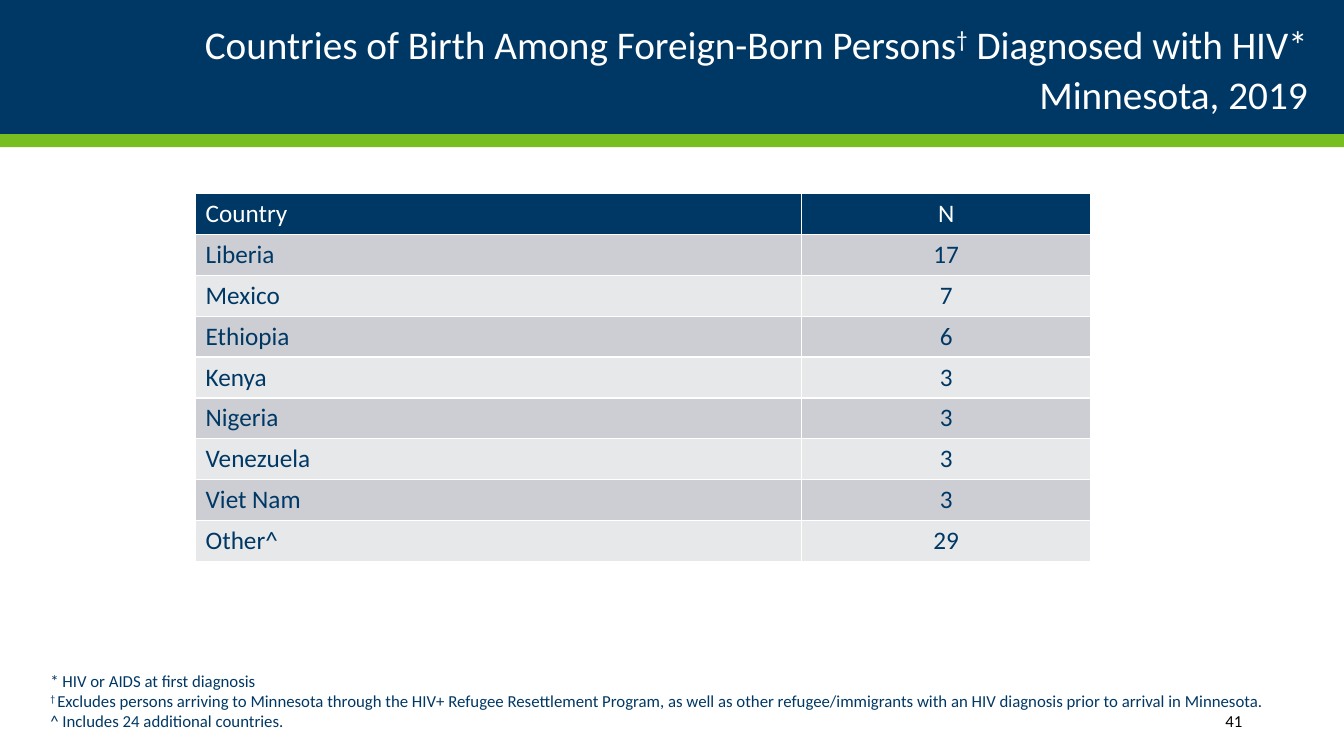
from pptx import Presentation, util as u
from pptx.dml.color import RGBColor
from pptx.enum import shapes, text

NAVY = RGBColor(0x00, 0x38, 0x65)
GREEN = RGBColor(0x78, 0xBE, 0x21)
WHITE = RGBColor(0xFF, 0xFF, 0xFF)
BLACK = RGBColor(0x00, 0x00, 0x00)
BANDS = [RGBColor(0xE7, 0xE8, 0xEA), RGBColor(0xCC, 0xCE, 0xD3)]
FONT = "Calibri"
DAGGER = "†"


def format_text(p, size, color, align):
    p.alignment = align
    for r in p.runs:
        r.font.name, r.font.size, r.font.bold = FONT, u.Pt(size), False
        r.font.color.rgb = color
        if r.text.strip() == DAGGER:
            r._r.get_or_add_rPr().set("baseline", "30000")


def add_text(s, left, top, width, height):
    tf = s.shapes.add_textbox(*map(u.Inches, (left, top, width, height))).text_frame
    tf.word_wrap = True
    return tf


prs = Presentation()
prs.slide_width, prs.slide_height = u.Inches(13.33), u.Inches(7.5)
s = prs.slides.add_slide(prs.slide_layouts[5])

# Header bands
for top, height, color in [(0, 1.33, NAVY), (1.33, 0.13, GREEN)]:
    sp = s.shapes.add_shape(shapes.MSO_SHAPE.RECTANGLE, 0, u.Inches(top),
                            prs.slide_width, u.Inches(height))
    sp.shadow.inherit = False
    sp.fill.solid()
    sp.fill.fore_color.rgb = color
    sp.line.fill.background()

# Title, brought in front of the bands
title = s.shapes.title
s.shapes._spTree.append(title._element)
title.left, title.top = u.Inches(0.92), u.Inches(0.17)
title.width, title.height = u.Inches(12.15), u.Inches(1)
tf = title.text_frame
tf.auto_size = text.MSO_AUTO_SIZE.NONE
tf.vertical_anchor = text.MSO_ANCHOR.MIDDLE
p = tf.paragraphs[0]
p.line_spacing = 1.05
for part in ["Countries of Birth Among Foreign-Born Persons", DAGGER,
             " Diagnosed with HIV*"]:
    p.add_run().text = part
p.add_line_break()
p.add_run().text = "Minnesota, 2019"
format_text(p, 28, WHITE, text.PP_ALIGN.RIGHT)

# Table of countries
rows = [("Country", "N"), ("Liberia", 17), ("Mexico", 7), ("Ethiopia", 6),
        ("Kenya", 3), ("Nigeria", 3), ("Venezuela", 3), ("Viet Nam", 3),
        ("Other^", 29)]
col_widths = [6.01, 2.87]
aligns = [text.PP_ALIGN.LEFT, text.PP_ALIGN.CENTER]
table = s.shapes.add_table(len(rows), len(col_widths), u.Inches(1.94), u.Inches(1.92),
                           u.Inches(sum(col_widths)), u.Inches(0.4 * len(rows))).table
for col, width in zip(table.columns, col_widths):
    col.width = u.Inches(width)
for i, row in enumerate(rows):
    for j, value in enumerate(row):
        cell = table.cell(i, j)
        cell.fill.solid()
        cell.fill.fore_color.rgb = BANDS[i % 2] if i else NAVY
        p = cell.text_frame.paragraphs[0]
        p.text = str(value)
        format_text(p, 18, NAVY if i else WHITE, aligns[j])

# Footnotes
notes = [
    ["* HIV or AIDS at first diagnosis"],
    [DAGGER + " ", "Excludes persons arriving to Minnesota through the HIV+ Refugee "
     "Resettlement Program, as well as other refugee/immigrants with an HIV diagnosis "
     "prior to arrival in Minnesota."],
    ["^ Includes 24 additional countries."],
]
tf = add_text(s, 0.4, 6.34, 12.28, 1.01)
tf.vertical_anchor = text.MSO_ANCHOR.BOTTOM
tf.margin_bottom = u.Inches(0.1)
for i, note in enumerate(notes):
    p = tf.add_paragraph() if i else tf.paragraphs[0]
    for part in note:
        p.add_run().text = part
    format_text(p, 12, NAVY, text.PP_ALIGN.LEFT)

# Slide number
tf = add_text(s, 10.82, 6.95, 1.6, 0.4)
tf.vertical_anchor = text.MSO_ANCHOR.MIDDLE
tf.text = "41"
format_text(tf.paragraphs[0], 12, BLACK, text.PP_ALIGN.RIGHT)

prs.save("out.pptx")
